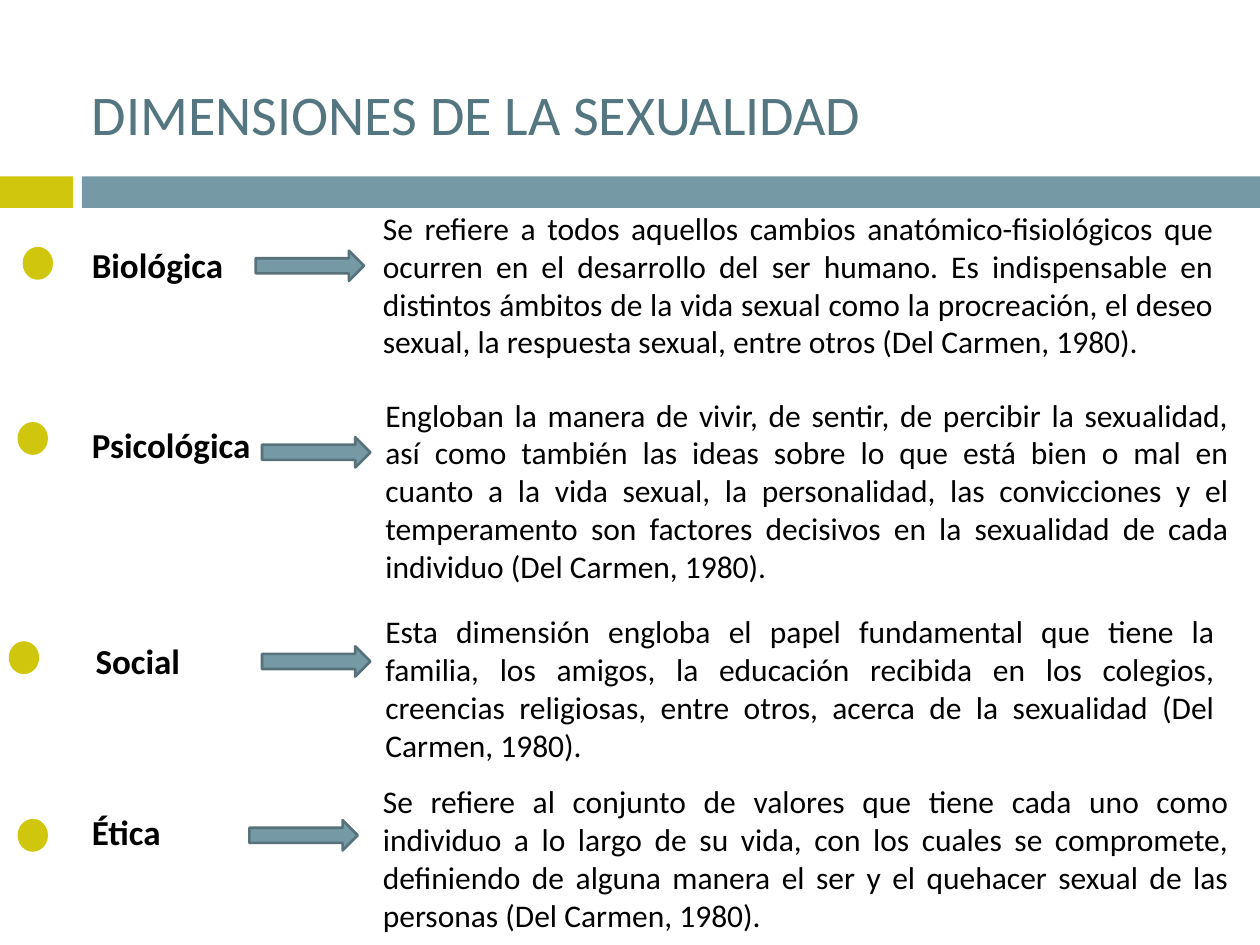
from dataclasses import dataclass

from pptx import Presentation, util as u
from pptx.dml.color import RGBColor
from pptx.enum import shapes, text

COLORS = {
    "lime": "CFC60D",
    "teal": "759AA5",
    "arrow_line": "57727A",
    "title": "537680",
    "text": "000000",
}
FONT = "Calibri"
WIDTH, HEIGHT = u.Inches(10), u.Inches(7.5)


@dataclass
class Box:
    """A place in percent of the slide's width and height."""
    left: float
    top: float
    width: float
    height: float

    def lengths(self) -> tuple:
        return (int(WIDTH * self.left / 100), int(HEIGHT * self.top / 100),
                int(WIDTH * self.width / 100), int(HEIGHT * self.height / 100))


@dataclass
class Dimension:
    name: str
    description: str
    bullet: tuple  # left, top
    label: Box
    arrow: tuple  # left, top
    body: Box


DIMENSIONS = [
    Dimension(
        "Biológica",
        "Se refiere a todos aquellos cambios anatómico-fisiológicos que ocurren "
        "en el desarrollo del ser humano. Es indispensable en distintos ámbitos "
        "de la vida sexual como la procreación, el deseo sexual, la respuesta "
        "sexual, entre otros (Del Carmen, 1980).",
        (1.9, 26.27), Box(6.3, 25.07, 14.2, 5.87),
        (20.3, 26.53), Box(29.4, 21.47, 67.9, 17.47)),
    Dimension(
        "Psicológica",
        "Engloban la manera de vivir, de sentir, de percibir la sexualidad, así "
        "como también las ideas sobre lo que está bien o mal en cuanto a la vida "
        "sexual, la personalidad, las convicciones y el temperamento son factores "
        "decisivos en la sexualidad de cada individuo (Del Carmen, 1980).",
        (1.5, 44.8), Box(6.3, 44.13, 15.1, 5.87),
        (20.8, 46.27), Box(29.6, 41.2, 68.9, 21.6)),
    Dimension(
        "Social",
        "Esta dimensión engloba el papel fundamental que tiene la familia, los "
        "amigos, la educación recibida en los colegios, creencias religiosas, "
        "entre otros, acerca de la sexualidad (Del Carmen, 1980).",
        (0.8, 68), Box(6.6, 67.07, 9.1, 5.87),
        (20.8, 68.4), Box(29.6, 64.13, 67.8, 17.47)),
    Dimension(
        "Ética",
        "Se refiere al conjunto de valores que tiene cada uno como individuo a lo "
        "largo de su vida, con los cuales se compromete, definiendo de alguna "
        "manera el ser y el quehacer sexual de las personas (Del Carmen, 1980).",
        (1.5, 86.8), Box(6.3, 85.07, 13.5, 5.87),
        (19.8, 86.8), Box(29.4, 82.13, 69.1, 17.47)),
]


def color(name: str) -> RGBColor:
    return RGBColor.from_string(COLORS[name])


def add_figure(slide, kind, box: Box, fill: str, line: str = "") -> None:
    shape = slide.shapes.add_shape(kind, *box.lengths())
    shape.shadow.inherit = False
    shape.fill.solid()
    shape.fill.fore_color.rgb = color(fill)
    if line:
        shape.line.color.rgb = color(line)
        shape.line.width = u.Pt(1.5)
    else:
        shape.line.fill.background()


def write(shape, words: str, size: int, tint: str = "text", bold: bool = False,
          align=text.PP_ALIGN.LEFT) -> None:
    frame = shape.text_frame
    frame.text = words
    frame.word_wrap = True
    frame.vertical_anchor = text.MSO_ANCHOR.TOP
    paragraph = frame.paragraphs[0]
    paragraph.alignment = align
    paragraph.font.name = FONT
    paragraph.font.size = u.Pt(size)
    paragraph.font.bold = bold
    paragraph.font.color.rgb = color(tint)


def add_dimension(slide, item: Dimension) -> None:
    add_figure(slide, shapes.MSO_SHAPE.OVAL, Box(*item.bullet, 2.2, 3.2),
               "lime", "lime")
    write(slide.shapes.add_textbox(*item.label.lengths()), item.name, 20, bold=True)
    add_figure(slide, shapes.MSO_SHAPE.RIGHT_ARROW, Box(*item.arrow, 8.6, 3.2),
               "teal", "arrow_line")
    write(slide.shapes.add_textbox(*item.body.lengths()), item.description, 18,
          align=text.PP_ALIGN.JUSTIFY)


def main() -> None:
    presentation = Presentation()
    presentation.slide_width, presentation.slide_height = WIDTH, HEIGHT
    slide = presentation.slides.add_slide(presentation.slide_layouts[5])

    # Title
    title = slide.shapes.title
    title.left, title.top, title.width, title.height = Box(6.3, 7.73, 70.1, 8.53).lengths()
    write(title, "DIMENSIONES DE LA SEXUALIDAD", 32, "title")

    # Band under the title
    add_figure(slide, shapes.MSO_SHAPE.RECTANGLE, Box(0, 18.67, 5.8, 3.33), "lime")
    add_figure(slide, shapes.MSO_SHAPE.RECTANGLE, Box(6.5, 18.67, 93.5, 3.33), "teal")

    # One row per dimension
    for item in DIMENSIONS:
        add_dimension(slide, item)

    presentation.save("out.pptx")


if __name__ == "__main__":
    main()
